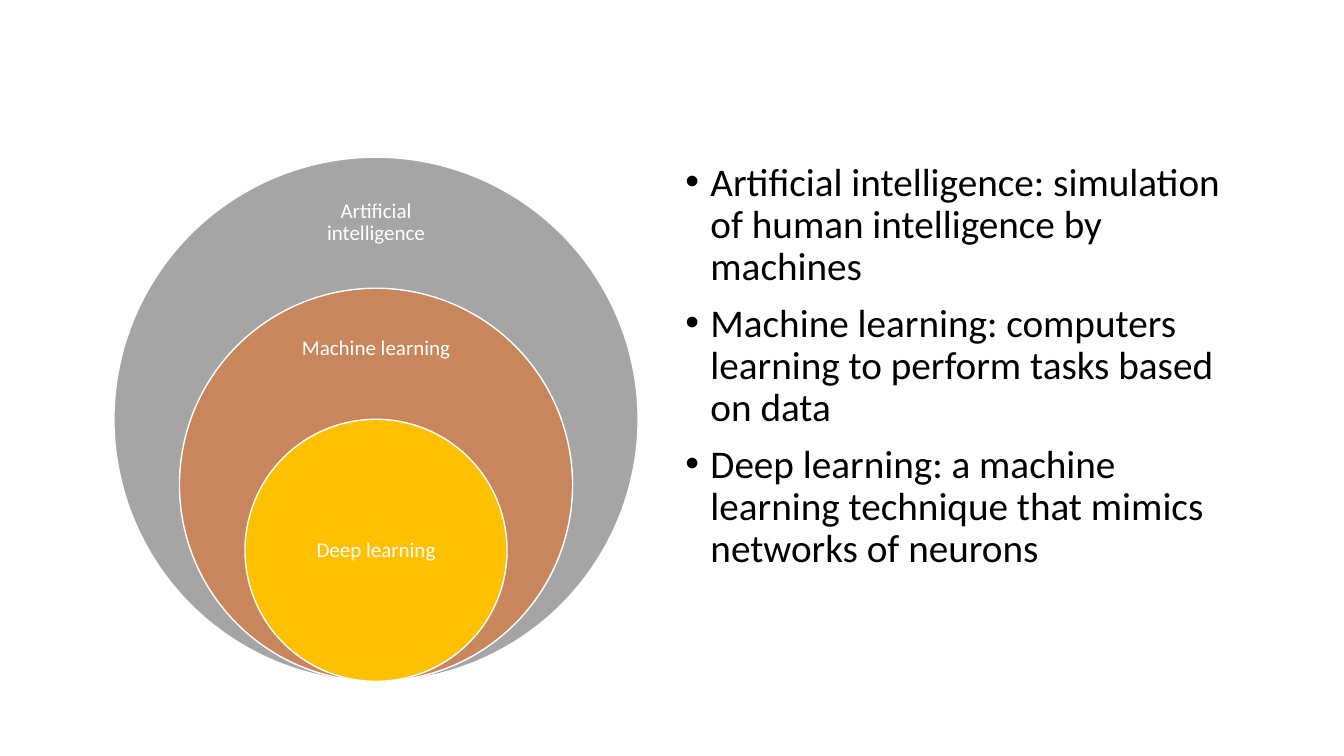
import pptx
import pptx.dml.color
import pptx.enum.shapes
import pptx.enum.text
import pptx.util
from lxml import etree

Pt = pptx.util.Pt
FONT = "Calibri"

# Label, fill, diameter share, label top and height as shares of the circle
CIRCLES = [
    ("Artificial intelligence", "A5A5A5", 1, 0.05, 0.15),
    ("Machine learning", "C9855C", 0.75, 0.06, 0.19),
    ("Deep learning", "FFC000", 0.5, 0.25, 0.5),
]
DEFINITIONS = [
    "Artificial intelligence: simulation of human intelligence by machines",
    "Machine learning: computers learning to perform tasks based on data",
    "Deep learning: a machine learning technique that mimics networks of neurons",
]


def color(value):
    return pptx.dml.color.RGBColor.from_string(value)


def add_text_box(slide, left, top, width, height):
    box = slide.shapes.add_textbox(Pt(left), Pt(top), Pt(width), Pt(height))
    box.text_frame.word_wrap = True
    return box.text_frame


def add_run(paragraph, text, size, text_color):
    paragraph.line_spacing = 0.9
    run = paragraph.add_run()
    run.text = text
    run.font.name = FONT
    run.font.size = Pt(size)
    run.font.color.rgb = color(text_color)


def add_label(slide, text, left, top, width, height):
    frame = add_text_box(slide, left, top, width, height)
    frame.vertical_anchor = pptx.enum.text.MSO_ANCHOR.MIDDLE
    frame.margin_left = frame.margin_right = Pt(8.5)
    frame.margin_top = frame.margin_bottom = Pt(8.5)
    paragraph = frame.paragraphs[0]
    paragraph.alignment = pptx.enum.text.PP_ALIGN.CENTER
    add_run(paragraph, text, 15, "FFFFFF")


def add_nested_circles(slide, left, top, size):
    """Circles that share a centre line and rest on the same bottom point."""
    label_width = size * 0.35
    for text, fill, share, label_top, label_height in CIRCLES:
        diameter = size * share
        circle_top = top + size - diameter
        circle = slide.shapes.add_shape(
            pptx.enum.shapes.MSO_SHAPE.OVAL,
            Pt(left + (size - diameter) / 2), Pt(circle_top),
            Pt(diameter), Pt(diameter))
        circle.shadow.inherit = False
        circle.fill.solid()
        circle.fill.fore_color.rgb = color(fill)
        circle.line.color.rgb = color("FFFFFF")
        circle.line.width = Pt(1)
        add_label(slide, text, left + (size - label_width) / 2,
                  circle_top + diameter * label_top,
                  label_width, diameter * label_height)


def add_bullet(paragraph, indent):
    properties = paragraph._p.get_or_add_pPr()
    properties.set("marL", str(Pt(indent)))
    properties.set("indent", str(-Pt(indent)))
    namespace = pptx.oxml.ns.qn
    etree.SubElement(properties, namespace("a:buFont")).set("typeface", "Arial")
    etree.SubElement(properties, namespace("a:buChar")).set("char", "•")


def add_definitions(slide, left, top, width, height):
    frame = add_text_box(slide, left, top, width, height)
    for index, text in enumerate(DEFINITIONS):
        paragraph = frame.add_paragraph() if index else frame.paragraphs[0]
        paragraph.space_before = Pt(10)
        add_run(paragraph, text, 28, "000000")
        add_bullet(paragraph, 18)


def main():
    presentation = pptx.Presentation()
    presentation.slide_width = Pt(960)
    presentation.slide_height = Pt(540)
    slide = presentation.slides.add_slide(presentation.slide_layouts[6])

    # Diagram on the left, definitions on the right
    add_nested_circles(slide, 81.4, 112.3, 374.4)
    add_definitions(slide, 482.4, 112.3, 411.8, 374.4)

    presentation.save("out.pptx")


if __name__ == "__main__":
    main()
